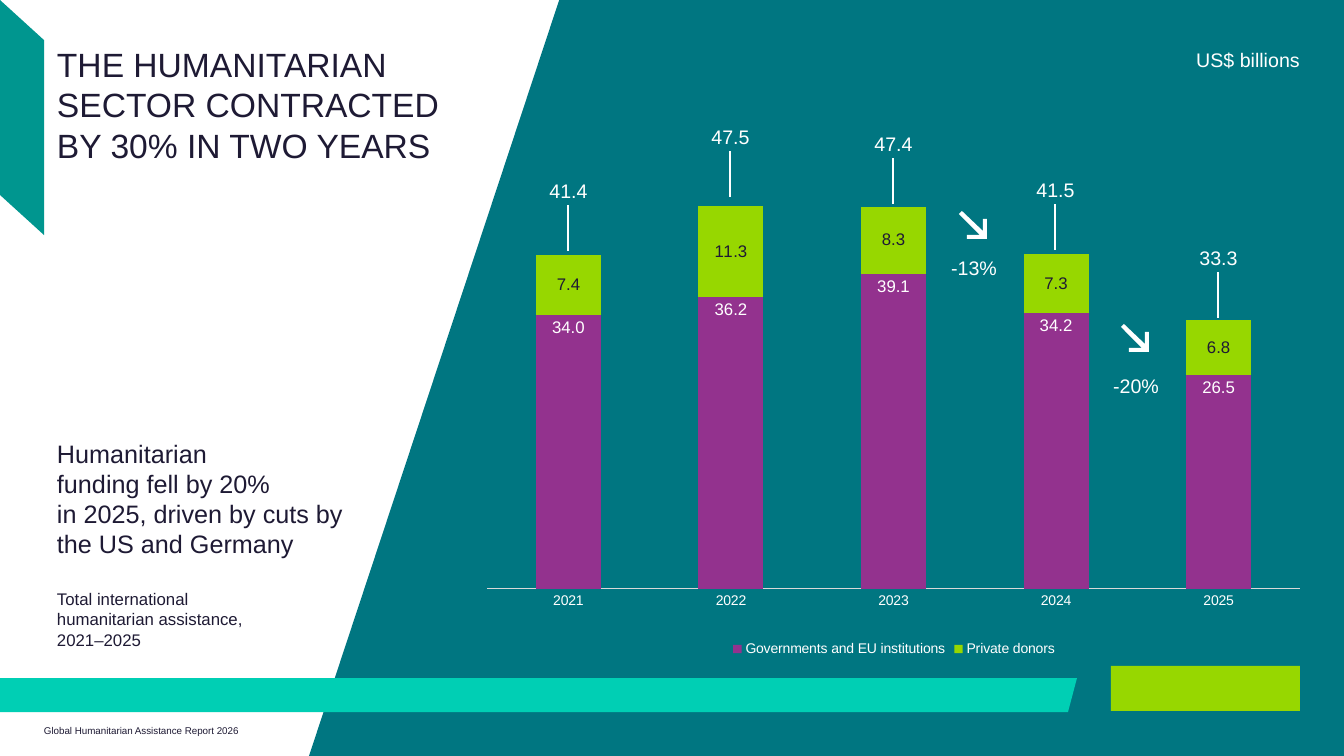
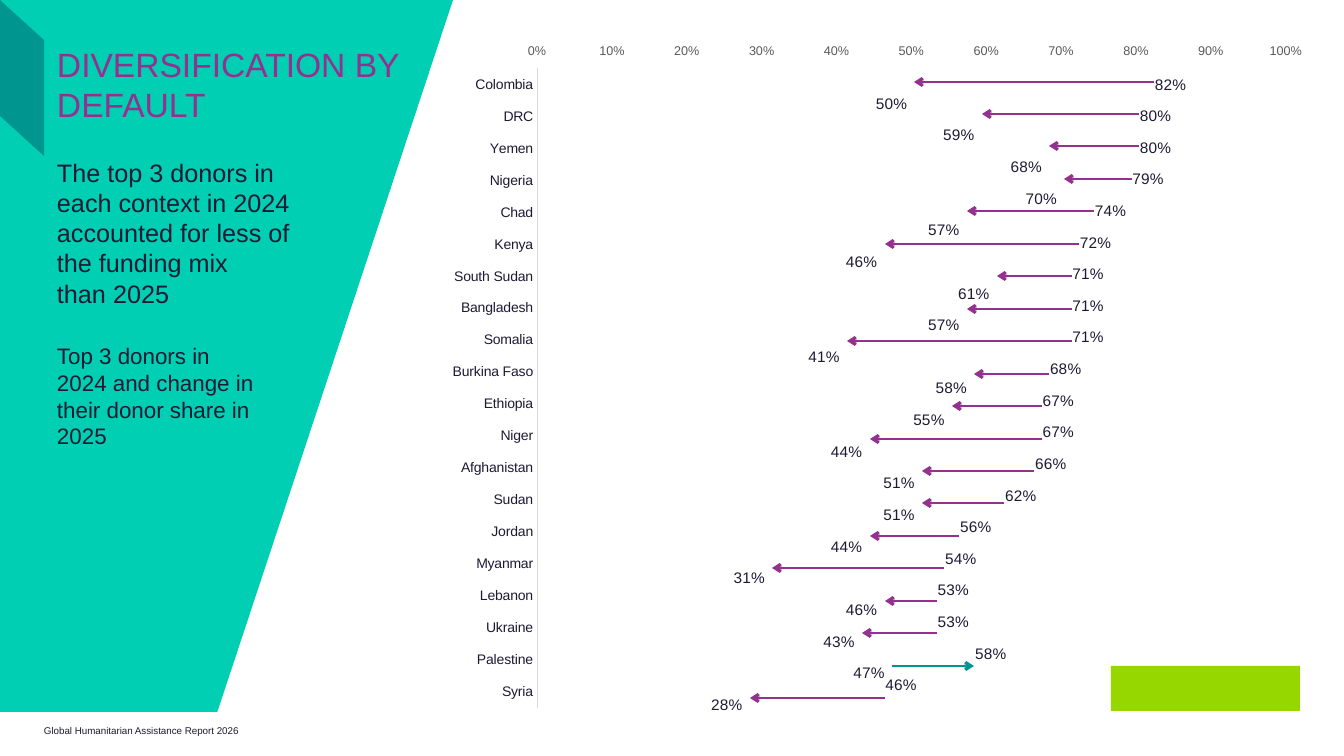
import lxml.etree
import pptx
import pptx.chart.data
import pptx.dml.color
import pptx.enum.chart
import pptx.enum.shapes
import pptx.enum.text
import pptx.oxml.ns
import pptx.util

qn = pptx.oxml.ns.qn
CHART = pptx.enum.chart
SHAPE = pptx.enum.shapes.MSO_SHAPE
ALIGN = pptx.enum.text.PP_ALIGN

EMU_PER_PX = 914400 / 100.8
FONT = "Arial"
COLOURS = {
    "white": "FFFFFF", "ink": "1E1A34", "petrol": "007681", "teal": "00968F",
    "mint": "00CFB4", "lime": "97D700", "purple": "93328E",
    "rule": "D9D9D9", "grey": "595959",
}

YEARS = ["2021", "2022", "2023", "2024", "2025"]
GOVERNMENTS = [34.0, 36.2, 39.1, 34.2, 26.5]
PRIVATE = [7.4, 11.3, 8.3, 7.3, 6.8]
TOTAL_TOPS = [178, 124, 131, 177, 245]

# Country, larger share, smaller share
SHARES = [
    ("Colombia", 0.82, 0.5), ("DRC", 0.8, 0.59), ("Yemen", 0.8, 0.68),
    ("Nigeria", 0.79, 0.7), ("Chad", 0.74, 0.57), ("Kenya", 0.72, 0.46),
    ("South Sudan", 0.71, 0.61), ("Bangladesh", 0.71, 0.57),
    ("Somalia", 0.71, 0.41), ("Burkina Faso", 0.68, 0.58),
    ("Ethiopia", 0.67, 0.55), ("Niger", 0.67, 0.44),
    ("Afghanistan", 0.66, 0.51), ("Sudan", 0.62, 0.51),
    ("Jordan", 0.56, 0.44), ("Myanmar", 0.54, 0.31),
    ("Lebanon", 0.53, 0.46), ("Ukraine", 0.53, 0.43),
    ("Palestine", 0.58, 0.47), ("Syria", 0.46, 0.28),
]
RISING = {"Palestine"}


def px(*lengths):
    return [round(length * EMU_PER_PX) for length in lengths]


def rgb(name):
    return pptx.dml.color.RGBColor.from_string(COLOURS[name])


def style_font(font, size, colour):
    font.name = FONT
    font.size = pptx.util.Pt(size)
    font.color.rgb = rgb(colour)


def set_layout(parent, position, **settings):
    """Give a chart part a manual layout at the given child position."""
    for old in parent.findall(qn("c:layout")):
        parent.remove(old)
    layout = lxml.etree.Element(qn("c:layout"))
    manual = lxml.etree.SubElement(layout, qn("c:manualLayout"))
    for tag, value in settings.items():
        lxml.etree.SubElement(manual, qn("c:" + tag)).set("val", str(value))
    parent.insert(position, layout)


class Deck:
    def __init__(self):
        self.deck = pptx.Presentation()
        self.deck.slide_width, self.deck.slide_height = px(1344, 756)
        self.page = None

    def new_page(self):
        self.page = self.deck.slides.add_slide(self.deck.slide_layouts[6])

    def paint(self, shape, colour):
        shape.shadow.inherit = False
        shape.fill.solid()
        shape.fill.fore_color.rgb = rgb(colour)
        shape.line.fill.background()

    def shape(self, kind, left, top, width, height, colour, slant=None, turn=0):
        shape = self.page.shapes.add_shape(kind, *px(left, top, width, height))
        self.paint(shape, colour)
        if slant is not None:
            shape.adjustments[0] = slant
        shape.rotation = turn

    def slanted(self, left, top, width, height, colour, slant, turn=0):
        self.shape(SHAPE.PARALLELOGRAM, left, top, width, height, colour, slant, turn)

    def corner_flag(self, length):
        """Upright slanted flag, 44 px wide, in the top left corner."""
        self.slanted((44 - length) / 2, (length - 44) / 2, length, 44, "teal", 0.91, 270)

    def text(self, text, left, top, width, height, size=14, colour="ink", align=ALIGN.LEFT):
        """Write text; a list gives paragraphs and a newline breaks a line."""
        box = self.page.shapes.add_textbox(*px(left, top, width, height))
        frame = box.text_frame
        frame.word_wrap = True
        frame.margin_left = frame.margin_right = frame.margin_top = frame.margin_bottom = 0
        for number, content in enumerate([text] if isinstance(text, str) else text):
            para = frame.add_paragraph() if number else frame.paragraphs[0]
            para.text = content.replace("\n", "\v")
            para.alignment = align
            para.line_spacing = pptx.util.Pt(size * 1.2)
            for span in para.runs:
                style_font(span.font, size, colour)

    def title(self, text, width, height, colour):
        self.text(text, 57, 44, width, height, size=24, colour=colour)

    def line(self, start, end, colour, weight, arrow=False):
        connector = self.page.shapes.add_connector(
            pptx.enum.shapes.MSO_CONNECTOR.STRAIGHT, *px(*start, *end))
        connector.line.color.rgb = rgb(colour)
        connector.line.width = pptx.util.Pt(weight)
        if arrow:
            outline = connector.line._get_or_add_ln()
            lxml.etree.SubElement(outline, qn("a:tailEnd")).set("type", "arrow")
        lxml.etree.SubElement(connector._element.spPr, qn("a:effectLst"))

    def down_arrow(self, left, top):
        """Outline of an arrow that points down to the right."""
        points = [(24, 20), (24, 8), (28, 8), (28, 28), (8, 28), (8, 24), (21, 24), (0, 3)]
        builder = self.page.shapes.build_freeform(3, 0, EMU_PER_PX)
        builder.add_line_segments(points, close=True)
        self.paint(builder.convert_to_shape(*px(left, top)), "white")

    def chart(self, kind, place, categories, series, number_format, plot_place, axis_colour, top):
        data = pptx.chart.data.CategoryChartData(number_format=number_format)
        data.categories = categories
        for name, values in series:
            data.add_series(name, values)
        chart = self.page.shapes.add_chart(kind, *px(*place), data).chart
        style_font(chart.font, 10, "ink")
        chart.has_title = False
        chart.has_legend = False
        plot = chart.plots[0]
        plot.gap_width = 150
        plot.vary_by_categories = False
        category_axis, value_axis = chart.category_axis, chart.value_axis
        category_axis.major_tick_mark = CHART.XL_TICK_MARK.NONE
        category_axis.format.line.color.rgb = rgb("rule")
        category_axis.format.line.width = pptx.util.Pt(0.75)
        style_font(category_axis.tick_labels.font, 10, axis_colour)
        value_axis.has_major_gridlines = False
        value_axis.minimum_scale, value_axis.maximum_scale = 0, top
        value_axis.major_unit = top / 10
        x, y, w, h = plot_place
        set_layout(chart._chartSpace.chart.plotArea, 0, layoutTarget="inner",
                   xMode="edge", yMode="edge", x=x, y=y, w=w, h=h)
        return chart

    def series_labels(self, series, position, size, colour, number_format):
        labels = series.data_labels
        labels.show_value = True
        labels.position = position
        labels.number_format = number_format
        labels.number_format_is_linked = False
        style_font(labels.font, size, colour)

    def footer(self):
        self.text("Global Humanitarian Assistance Report 2026", 44, 725, 454, 39, size=7)

    def emblem(self):
        self.shape(SHAPE.RECTANGLE, 1111, 666, 189, 45, "lime")


def contraction_page(show):
    show.new_page()
    show.slanted(309, 0, 1286, 756, "petrol", 0.331)
    show.title("THE HUMANITARIAN SECTOR CONTRACTED BY 30% IN TWO YEARS", 421, 185, "ink")
    show.text("Total international humanitarian assistance, 2021–2025",
              57, 589, 228, 73, size=12)
    show.text(["Humanitarian",
               "funding fell by 20%\nin 2025, driven by cuts by the US and Germany"],
              57, 438, 301, 86, size=18)
    show.text("US$ billions", 1091, 48, 209, 45, colour="white", align=ALIGN.RIGHT)
    show.corner_flag(235)

    chart = show.chart(
        CHART.XL_CHART_TYPE.COLUMN_STACKED, (472, 170, 844, 491), YEARS,
        [("Governments and EU institutions", GOVERNMENTS), ("Private donors", PRIVATE)],
        "0.0", (0.018, 0.032, 0.963, 0.821), "white", 50)
    chart.plots[0].overlap = 100
    chart.value_axis.visible = False
    chart.has_legend = True
    chart.legend.position = CHART.XL_LEGEND_POSITION.BOTTOM
    chart.legend.include_in_layout = False
    style_font(chart.legend.font, 10, "white")
    positions = CHART.XL_LABEL_POSITION
    looks = [("purple", positions.INSIDE_END, "white"), ("lime", positions.CENTER, "ink")]
    for series, (fill, position, colour) in zip(chart.plots[0].series, looks):
        series.format.fill.solid()
        series.format.fill.fore_color.rgb = rgb(fill)
        show.series_labels(series, position, 12, colour, "0.0")

    for number, (public, private, top) in enumerate(zip(GOVERNMENTS, PRIVATE, TOTAL_TOPS)):
        centre = 568 + 325 * number // 2
        show.text(f"{public + private:.1f}", centre - 46, top + 1, 93, 45,
                  colour="white", align=ALIGN.CENTER)
        show.line((centre, top + 73), (centre, top + 27), "white", 1)

    for change, left, top, label_top in [("-13%", 959, 211, 256), ("-20%", 1121, 324, 374)]:
        show.down_arrow(left, top)
        show.text(change, left - 34, label_top, 98, 42, colour="white", align=ALIGN.CENTER)

    show.footer()
    show.emblem()
    show.slanted(-10, 678, 1087, 34, "mint", 0.264)


def diversification_page(show):
    show.new_page()
    show.slanted(-757, 0, 1210, 712, "mint", 0.331)
    show.corner_flag(156)
    show.title("DIVERSIFICATION BY DEFAULT", 358, 36, "purple")
    show.text("The top 3 donors in each context in 2024 accounted for less of "
              "the funding mix\nthan 2025", 57, 157, 271, 45, size=18)
    show.footer()

    chart_height = 774
    countries, high, low = zip(*SHARES)
    chart = show.chart(
        CHART.XL_CHART_TYPE.BAR_CLUSTERED, (312, 44, 1047, chart_height), countries,
        [("Series 1", high), ("Series 2", low)],
        "0%", (0.215, 0.026, 0.715, 0.831), "ink", 1)
    chart.category_axis.reverse_order = True
    axis = chart.value_axis
    axis.major_tick_mark = CHART.XL_TICK_MARK.OUTSIDE
    axis.format.line.fill.background()
    axis.tick_labels.number_format = "0%"
    axis.tick_labels.number_format_is_linked = False
    style_font(axis.tick_labels.font, 9, "grey")
    positions = CHART.XL_LABEL_POSITION
    drops = [(positions.OUTSIDE_END, 4.6, 0.37), (positions.INSIDE_END, 14.5, 0.32)]
    for series, (position, first_drop, step) in zip(chart.plots[0].series, drops):
        series.format.fill.background()
        series.format.line.fill.background()
        show.series_labels(series, position, 11, "ink", "0%")
        for number in range(len(countries)):
            label = series.points[number].data_label
            label.position = position
            style_font(label.font, 11, "ink")
        for number, element in enumerate(series._element.iter(qn("c:dLbl"))):
            drop = (first_drop - step * number) / chart_height
            set_layout(element, 1, x=0, y=round(drop, 4))

    show.text("Top 3 donors in 2024 and change in their donor share in 2025",
              57, 342, 208, 86, size=16)

    for number, (country, larger, smaller) in enumerate(SHARES):
        y = round(81.6 + 32.45 * number)
        ends = [(round(540 + 749 * share), y) for share in (larger, smaller)]
        rising = country in RISING
        if rising:
            ends.reverse()
        show.line(*ends, "teal" if rising else "purple", 2, arrow=True)
    show.emblem()


def main():
    show = Deck()
    contraction_page(show)
    diversification_page(show)
    show.deck.save("out.pptx")


if __name__ == "__main__":
    main()
